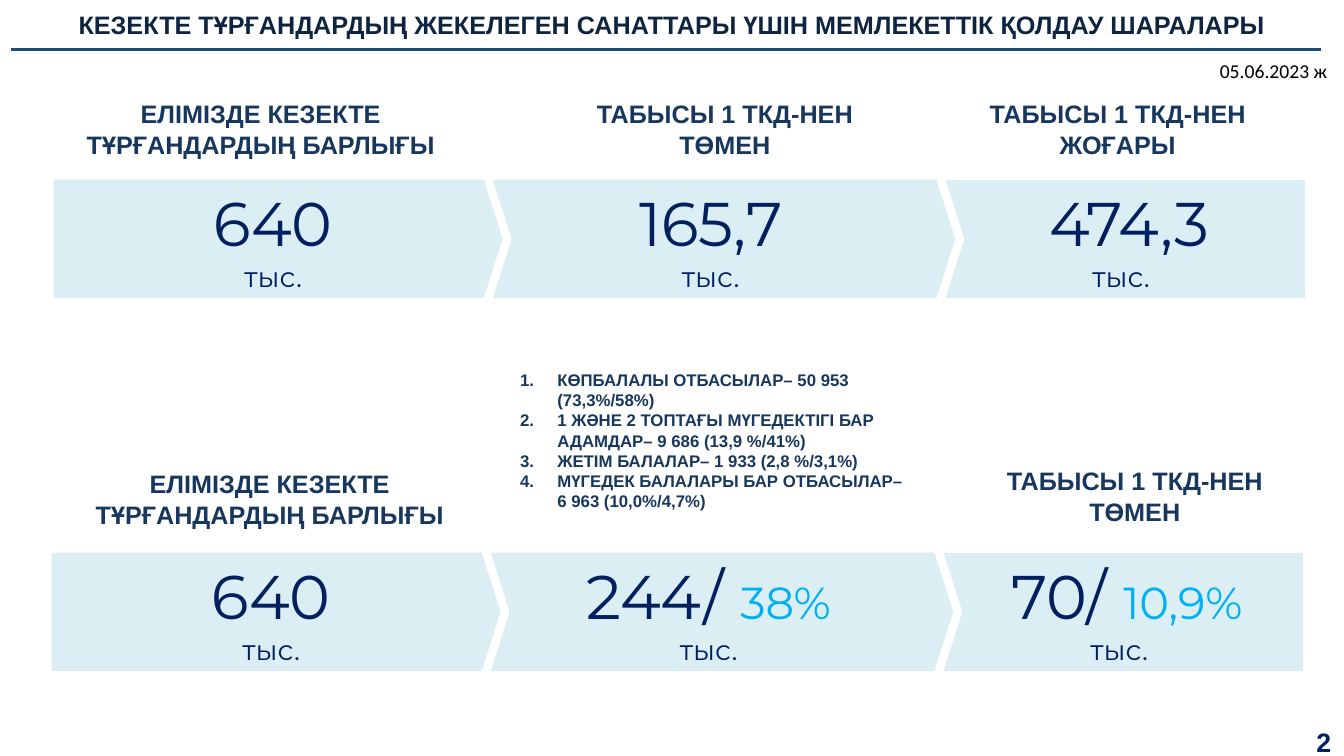
from lxml import etree
from pptx import Presentation
from pptx.dml.color import RGBColor
from pptx.enum.shapes import MSO_CONNECTOR, MSO_SHAPE
from pptx.enum.text import MSO_ANCHOR, MSO_AUTO_SIZE, PP_ALIGN
from pptx.oxml.ns import qn
from pptx.util import Inches, Pt

PLATE = MSO_SHAPE.PENTAGON
LINE = MSO_CONNECTOR.STRAIGHT
MID, TOP = MSO_ANCHOR.MIDDLE, MSO_ANCHOR.TOP
GROW, FIXED = MSO_AUTO_SIZE.SHAPE_TO_FIT_TEXT, MSO_AUTO_SIZE.NONE
LEFT, CENTER, RIGHT = PP_ALIGN.LEFT, PP_ALIGN.CENTER, PP_ALIGN.RIGHT

HUES = {
    "pale": "DBEEF4", "white": "FFFFFF", "navy": "002060", "sky": "00B0F0",
    "steel": "17375E", "ink": "0F243E", "rule": "1E4E79", "black": "000000",
}
STYLES = {
    "title": ("Arial", 18, True, "ink"),
    "head": ("Arial", 18, True, "steel"),
    "list": ("Arial", 12, True, "steel"),
    "page": ("Arial", 19, True, "navy"),
    "date": ("Calibri", 14, False, "black"),
    "value": ("Montserrat", 44, False, "navy"),
    "share": ("Montserrat", 32, False, "sky"),
    "unit": ("Montserrat", 20, False, "navy"),
}


def write(frame, lines, align, form):
    for key, val in form.items():
        setattr(frame, key, val)
    for i, runs in enumerate(lines):
        para = frame.paragraphs[0] if i == 0 else frame.add_paragraph()
        para.alignment = align
        for text, style in runs:
            face, size, bold, hue = STYLES[style]
            run = para.add_run()
            run.text = text
            look = {"name": face, "size": Pt(size), "bold": bold}
            for key, val in look.items():
                setattr(run.font, key, val)
            run.font.color.rgb = RGBColor.from_string(HUES[hue])


def label(spot, lines, style, align=CENTER, **extra):
    box = slide.shapes.add_textbox(*map(Inches, spot))
    form = {"word_wrap": True, "auto_size": GROW, "vertical_anchor": TOP}
    write(box.text_frame, [[(line, style)] for line in lines], align, form | extra)
    return box.text_frame


deck = Presentation()
deck.slide_width, deck.slide_height = Inches(13.33), Inches(7.5)
slide = deck.slides.add_slide(deck.slide_layouts[6])

PLATES = [(8.77, 3.72, 0), (4.19, 4.84, 0.159), (0, 4.54, 0.159)]
ROWS = [
    (0.49, 1.74, [[(" 474,3", "value")], [("165,7", "value")], [("640", "value")]]),
    (0.47, 5.44, [
        [(" 70/ ", "value"), ("10,9%", "share")],
        [("244/ ", "value"), ("38%", "share")],
        [("640", "value")],
    ]),
]
for left, top, facts in ROWS:
    for (step, width, point), fact in zip(PLATES, facts):
        plate = slide.shapes.add_shape(
            PLATE, Inches(left + step), Inches(top), Inches(width), Inches(1.26))
        plate.adjustments[0] = point
        plate.shadow.inherit = False
        plate.fill.solid()
        plate.fill.fore_color.rgb = RGBColor.from_string(HUES["pale"])
        plate.line.color.rgb = RGBColor.from_string(HUES["white"])
        plate.line.width = Pt(6)
        write(plate.text_frame, [fact, [("тыс.", "unit")]], CENTER,
              {"word_wrap": True, "vertical_anchor": MID})

TOTAL = "ЕЛІМІЗДЕ КЕЗЕКТЕ ТҰРҒАНДАРДЫҢ БАРЛЫҒЫ"
BELOW = "ТАБЫСЫ 1 ТКД-НЕН ТӨМЕН"
ABOVE = "ТАБЫСЫ 1 ТКД-НЕН ЖОҒАРЫ"
HEADS = [
    (0.49, 0.93, 4.19, TOTAL), (5.61, 0.93, 3.16, BELOW), (9.53, 0.93, 3.11, ABOVE),
    (0.7, 4.6, 3.95, TOTAL), (9.88, 4.57, 2.75, BELOW),
]
for left, top, width, text in HEADS:
    label((left, top, width, 0.71), [text], "head")

GROUPS = [
    "КӨПБАЛАЛЫ ОТБАСЫЛАР– 50 953 (73,3%/58%)",
    "1 ЖӘНЕ 2 ТОПТАҒЫ МҮГЕДЕКТІГІ БАР АДАМДАР– 9 686 (13,9 %/41%)",
    "ЖЕТІМ БАЛАЛАР– 1 933 (2,8 %/3,1%)",
    "МҮГЕДЕК БАЛАЛАРЫ БАР ОТБАСЫЛАР– 6 963 (10,0%/4,7%)",
]
groups = label((5.06, 3.62, 4.09, 1.51), GROUPS, "list", LEFT)
for para in groups.paragraphs:
    props = para._p.get_or_add_pPr()
    props.set("marL", str(Inches(0.37)))
    props.set("indent", str(-Inches(0.37)))
    etree.SubElement(props, qn("a:buFont"), typeface="+mj-lt")
    etree.SubElement(props, qn("a:buAutoNum"), type="arabicPeriod")

label((12, 0.54, 1.34, 0.34), ["05.06.2023 ж"], "date", LEFT)
label((12.95, 7.15, 0.35, 0.42), ["2"], "page", RIGHT, word_wrap=False)
title = label(
    (0, -0.01, 13.33, 0.54),
    ["КЕЗЕКТЕ ТҰРҒАНДАРДЫҢ ЖЕКЕЛЕГЕН САНАТТАРЫ ҮШІН МЕМЛЕКЕТТІК ҚОЛДАУ ШАРАЛАРЫ"],
    "title", auto_size=FIXED, vertical_anchor=MID,
    margin_left=Inches(0.13), margin_right=Inches(0.13),
    margin_top=Inches(0.07), margin_bottom=Inches(0.07))
title.paragraphs[0].line_spacing = 0.9

rule = slide.shapes.add_connector(
    LINE, Inches(0.11), Inches(0.49), Inches(13.1), Inches(0.49))
rule.line.color.rgb = RGBColor.from_string(HUES["rule"])
rule.line.width = Pt(2.25)
etree.SubElement(rule._element.spPr, qn("a:effectLst"))

deck.save("out.pptx")
